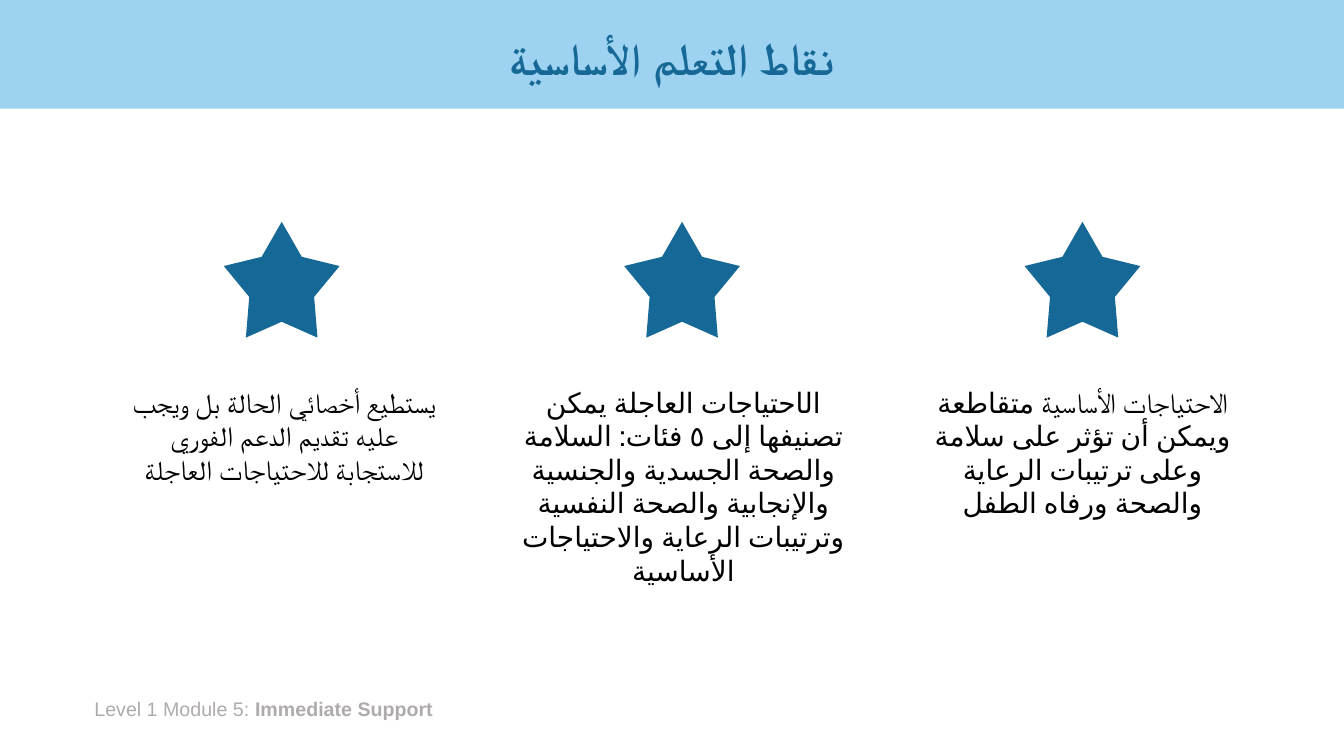
"""Build the Arabic key learning points slide with three starred columns."""
import dataclasses

import pptx
import pptx.dml.color
import pptx.enum.lang
import pptx.enum.shapes
import pptx.enum.text
import pptx.util

Cm = pptx.util.Cm
ARABIC = pptx.enum.lang.MSO_LANGUAGE_ID.ARABIC
EGYPTIAN = pptx.enum.lang.MSO_LANGUAGE_ID.ARABIC_EGYPT
ENGLISH = pptx.enum.lang.MSO_LANGUAGE_ID.ENGLISH_US


@dataclasses.dataclass(frozen=True)
class Theme:
    band: str = "9DD3F1"
    accent: str = "166996"
    ink: str = "000000"
    muted: str = "AFABAB"
    text_font: str = "Calibri"
    footer_font: str = "Arial"
    title_size: int = 32
    text_size: int = 20
    footer_size: int = 14


class SlideBuilder:
    def __init__(self, slide, theme):
        self.slide = slide
        self.theme = theme

    def add_filled_shape(self, kind, left, top, width, height, color):
        shape = self.slide.shapes.add_shape(kind, Cm(left), Cm(top), Cm(width), Cm(height))
        shape.shadow.inherit = False
        shape.fill.solid()
        shape.fill.fore_color.rgb = pptx.dml.color.RGBColor.from_string(color)
        shape.line.fill.background()
        return shape

    def add_run(self, paragraph, text, size, color, font_name, bold=False, language=ENGLISH):
        run = paragraph.add_run()
        run.text = text
        font = run.font
        font.size = pptx.util.Pt(size)
        font.name = font_name
        font.bold = bold
        font.color.rgb = pptx.dml.color.RGBColor.from_string(color)
        font.language_id = language

    def center_right_to_left(self, paragraph):
        paragraph.alignment = pptx.enum.text.PP_ALIGN.CENTER
        paragraph._p.get_or_add_pPr().set("rtl", "1")

    def add_text_box(self, left, top, width, height):
        box = self.slide.shapes.add_textbox(Cm(left), Cm(top), Cm(width), Cm(height))
        box.text_frame.word_wrap = True
        box.text_frame.auto_size = pptx.enum.text.MSO_AUTO_SIZE.SHAPE_TO_FIT_TEXT
        return box.text_frame.paragraphs[0]

    def add_title(self, text):
        theme = self.theme
        title = self.slide.shapes.title
        title.left, title.top, title.width, title.height = Cm(2.33), Cm(0.33), Cm(29.21), Cm(2.41)
        title.text_frame.vertical_anchor = pptx.enum.text.MSO_ANCHOR.MIDDLE
        paragraph = title.text_frame.paragraphs[0]
        paragraph.line_spacing = 0.9
        self.center_right_to_left(paragraph)
        self.add_run(paragraph, text, theme.title_size, theme.accent, theme.text_font, bold=True)

    def add_band(self):
        rectangle = pptx.enum.shapes.MSO_SHAPE.RECTANGLE
        band = self.add_filled_shape(rectangle, 0, 0, 33.87, 2.74, self.theme.band)
        self.slide.shapes.title.element.addprevious(band.element)

    def add_footer(self, module, topic):
        theme = self.theme
        paragraph = self.add_text_box(2.13, 17.43, 11.56, 0.86)
        for text, bold in ((module, False), (topic, True)):
            self.add_run(paragraph, text, theme.footer_size, theme.muted, theme.footer_font, bold)

    def add_star(self, center):
        size = 2.92
        kind = pptx.enum.shapes.MSO_SHAPE.STAR_5_POINT
        star = self.add_filled_shape(kind, center - size / 2, 5.59, size, size, self.theme.accent)
        star.adjustments[0] = 0.28

    def add_point(self, center, width, height, runs):
        theme = self.theme
        paragraph = self.add_text_box(center - width / 2, 9.58, width, height)
        self.center_right_to_left(paragraph)
        for text, language in runs:
            self.add_run(paragraph, text, theme.text_size, theme.ink,
                         theme.text_font, language=language)


LEARNING_POINTS = (
    (8.53, 2.82, (
        ("يستطيع أخصائي الحالة بل ويجب عليه تقديم الدعم الفوري للاستجابة للاحتياجات العاجلة", ENGLISH),
    )),
    (9.32, 4.52, (
        ("ال", EGYPTIAN),
        ("احتياجات العاجلة يمكن تصنيفها إلى ٥ فئات: السلامة والصحة الجسدية والجنسية "
         "والإنجابية والصحة النفسية وترتيبات الرعاية والاحتياجات الأساسية", ARABIC),
    )),
    (8.53, 3.68, (
        ("الاحتياجات الأساسية ", ENGLISH),
        ("متقاطعة ويمكن أن تؤثر على سلامة وعلى ترتيبات الرعاية والصحة ورفاه الطفل", ARABIC),
    )),
)


def main():
    presentation = pptx.Presentation()
    presentation.slide_width = Cm(33.87)
    presentation.slide_height = Cm(19.05)
    slide = presentation.slides.add_slide(presentation.slide_layouts[5])
    builder = SlideBuilder(slide, Theme())
    builder.add_band()
    builder.add_title("نقاط التعلم الأساسية")
    builder.add_footer("Level 1 Module 5: ", "Immediate Support")
    for index, (width, height, runs) in enumerate(LEARNING_POINTS):
        builder.add_star(7.1 + 10.09 * index)
        builder.add_point(7.16 + 10.06 * index, width, height, runs)
    presentation.save("out.pptx")


if __name__ == "__main__":
    main()
